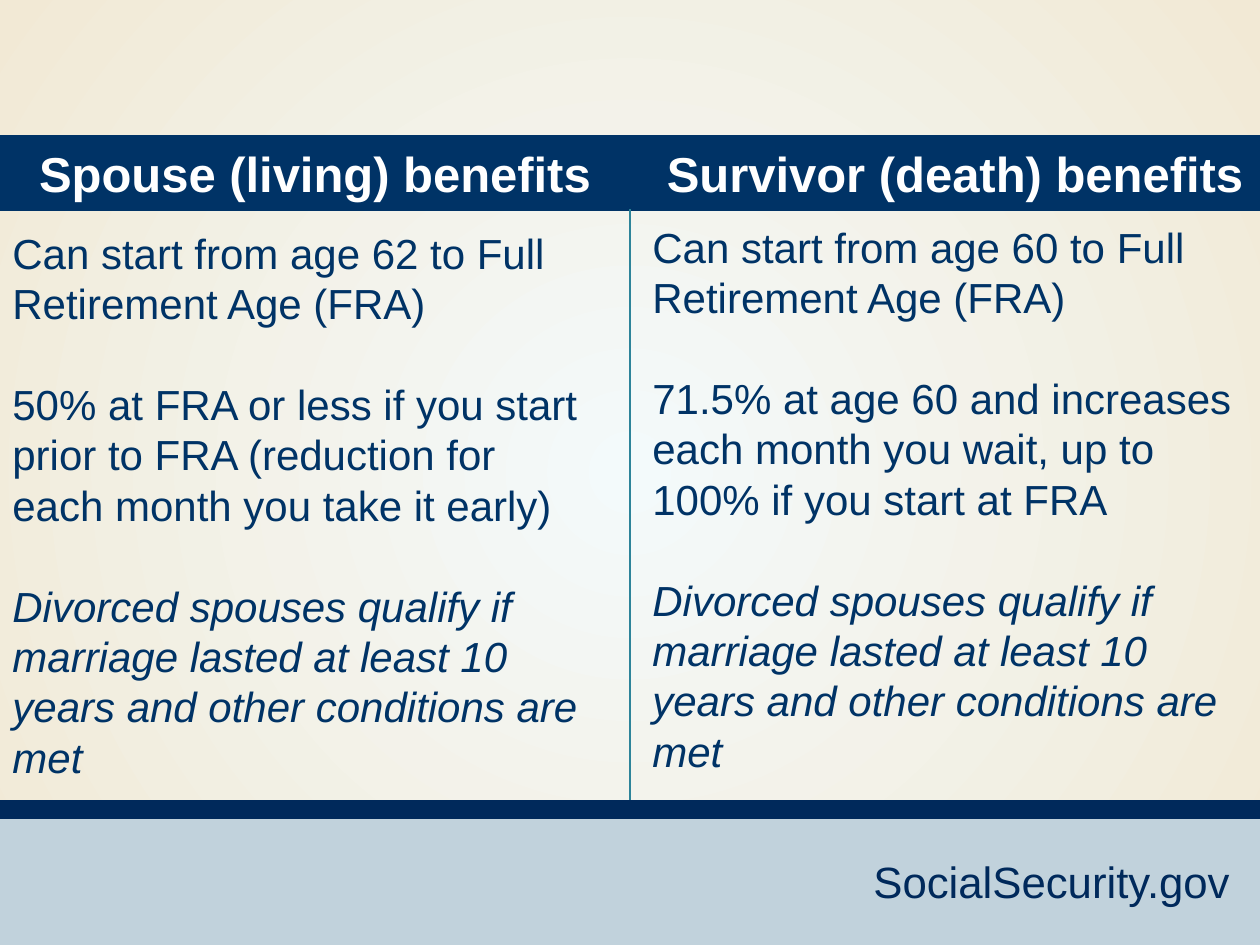
from lxml.etree import SubElement
from pptx import Presentation
from pptx.dml.color import RGBColor
from pptx.enum.shapes import MSO_CONNECTOR, MSO_SHAPE
from pptx.enum.text import PP_ALIGN
from pptx.oxml.ns import qn
from pptx.util import Pt

PX = 914400 / 126
NAVY = RGBColor(0x00, 0x33, 0x66)
DARK_NAVY = RGBColor(0x00, 0x29, 0x5B)
PALE_BLUE = RGBColor(0xC1, 0xD2, 0xDC)
TEAL = RGBColor(0x2D, 0x84, 0x9A)
WHITE = RGBColor(0xFF, 0xFF, 0xFF)
CENTER_TINT = RGBColor(0xF3, 0xFA, 0xFB)
EDGE_TINT = RGBColor(0xF2, 0xE9, 0xD5)

DIVORCED = ("Divorced spouses qualify if marriage lasted at least 10 years "
            "and other conditions are met")
SPOUSE = ["Can start from age 62 to Full Retirement Age (FRA)",
          "50% at FRA or less if you start prior to FRA "
          "(reduction for each month you take it early)",
          DIVORCED]
SURVIVOR = ["Can start from age 60 to Full Retirement Age (FRA)",
            "71.5% at age 60 and increases each month you wait, "
            "up to 100% if you start at FRA",
            DIVORCED]


def emu(*lengths):
    return [round(n * PX) for n in lengths]


def add_text(slide, box, paragraphs, size, color, bold=False, align=None,
             gap=0, italic_last=False):
    """Add a text box; gap is the space in points between paragraphs."""
    tf = slide.shapes.add_textbox(*emu(*box)).text_frame
    tf.word_wrap = True
    for i, text in enumerate(paragraphs):
        p = tf.paragraphs[0] if i == 0 else tf.add_paragraph()
        if i:
            p.space_before = Pt(gap)
        if align is not None:
            p.alignment = align
        r = p.add_run()
        r.text = text
        r.font.name = "Arial"
        r.font.size = Pt(size)
        r.font.bold = bold
        r.font.italic = italic_last and i == len(paragraphs) - 1
        r.font.color.rgb = color


def add_bar(slide, box, color, line_width=0):
    sp = slide.shapes.add_shape(MSO_SHAPE.RECTANGLE, *emu(*box))
    sp.shadow.inherit = False
    sp.fill.solid()
    sp.fill.fore_color.rgb = color
    if line_width:
        sp.line.color.rgb = color
        sp.line.width = Pt(line_width)
    else:
        sp.line.fill.background()
    return sp


def set_background(slide):
    """Fill the slide with a gradient that spreads from its centre."""
    fill = slide.background.fill
    fill.gradient()
    for stop, color, position in zip(fill.gradient_stops,
                                     (CENTER_TINT, EDGE_TINT), (0, 1)):
        stop.color.rgb = color
        stop.position = position
    grad = next(slide.background._cSld.iter(qn("a:gradFill")))
    grad.remove(grad.find(qn("a:lin")))
    circle = SubElement(grad, qn("a:path"), path="circle")
    SubElement(circle, qn("a:fillToRect"),
               {side: "50000" for side in "ltrb"})


def add_footer(slide, x, y, w, h):
    add_bar(slide, (x, y + 13, w, h - 13), PALE_BLUE)
    stripe = add_bar(slide, (x, y, w, 19), DARK_NAVY)
    add_text(slide, (x + 861, y + 49, 387, 66), ["SocialSecurity.gov"],
             25, DARK_NAVY)
    return stripe


def add_benefits(slide, x, y, w, title, title_width, paragraphs, body_offset):
    """Add one column: a heading over its paragraphs."""
    add_text(slide, (x, y, title_width, 72), [title], 28, WHITE, bold=True,
             align=PP_ALIGN.CENTER)
    add_text(slide, (x, y + body_offset, w, 572), paragraphs, 24, NAVY,
             gap=28.8, italic_last=True)


def add_divider(slide, header, stripe):
    line = slide.shapes.add_connector(MSO_CONNECTOR.STRAIGHT, 0, 0, 0, 0)
    line.begin_connect(header, 2)
    line.end_connect(stripe, 0)
    line.line.color.rgb = TEAL
    line.line.width = Pt(0.75)
    SubElement(line._element.spPr, qn("a:effectLst"))


def main():
    prs = Presentation()
    prs.slide_width, prs.slide_height = emu(1260, 945)
    slide = prs.slides.add_slide(prs.slide_layouts[6])
    set_background(slide)
    stripe = add_footer(slide, 0, 800, 1260, 145)
    header = add_bar(slide, (0, 137, 1260, 72), NAVY, line_width=2)
    add_benefits(slide, 0, 137, 598, "Spouse (living) benefits", 630,
                 SPOUSE, 84)
    add_benefits(slide, 640, 137, 620, "Survivor (death) benefits", 630,
                 SURVIVOR, 78)
    add_divider(slide, header, stripe)
    prs.save("out.pptx")


if __name__ == "__main__":
    main()
